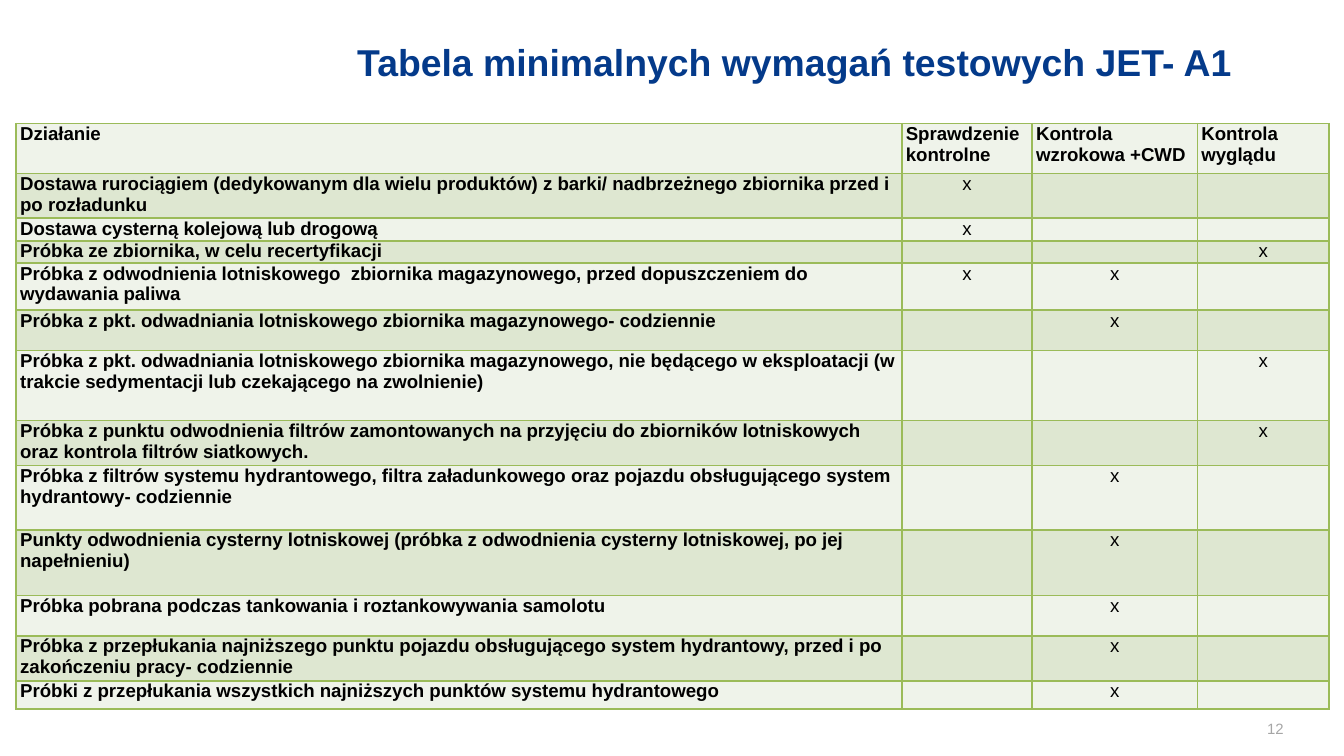
from pptx import Presentation
from pptx.dml.color import RGBColor
from pptx.enum.text import MSO_ANCHOR, PP_ALIGN as Align
from pptx.oxml.ns import qn
from pptx.util import Inches, Pt
from lxml.etree import SubElement

NAVY = RGBColor(0x04, 0x3A, 0x8A)
GRAY = RGBColor(0xA6, 0xA6, 0xA6)
BLACK = RGBColor(0, 0, 0)
GREEN = RGBColor(0x9B, 0xBB, 0x59)
LIGHT = RGBColor(0xEF, 0xF3, 0xEA)
SAGE = RGBColor(0xDE, 0xE7, 0xD1)
FACE = "Arial"

# Content: row height, action, columns of the x marks
TITLE = "Tabela minimalnych wymagań testowych JET- A1"
HEADS = ["Działanie", "Sprawdzenie kontrolne", "Kontrola wzrokowa +CWD", "Kontrola wyglądu"]
WIDTHS = [6.59, 0.97, 1.23, 0.98]
HEAD_H = 0.37
CHECK, CWD, LOOK = 1, 2, 3
TESTS = [
    (0.3, "Dostawa rurociągiem (dedykowanym dla wielu produktów) z barki/ nadbrzeżnego "
          "zbiornika przed i po rozładunku", [CHECK]),
    (0.14, "Dostawa cysterną kolejową lub drogową", [CHECK]),
    (0.14, "Próbka ze zbiornika, w celu recertyfikacji", [LOOK]),
    (0.35, "Próbka z odwodnienia lotniskowego  zbiornika magazynowego, przed "
           "dopuszczeniem do wydawania paliwa", [CHECK, CWD]),
    (0.3, "Próbka z pkt. odwadniania lotniskowego zbiornika magazynowego- codziennie", [CWD]),
    (0.52, "Próbka z pkt. odwadniania lotniskowego zbiornika magazynowego, nie będącego "
           "w eksploatacji (w trakcie sedymentacji lub czekającego na zwolnienie)", [LOOK]),
    (0.28, "Próbka z punktu odwodnienia filtrów zamontowanych na przyjęciu do zbiorników "
           "lotniskowych oraz kontrola filtrów siatkowych.", [LOOK]),
    (0.48, "Próbka z filtrów systemu hydrantowego, filtra załadunkowego oraz pojazdu "
           "obsługującego system hydrantowy- codziennie", [CWD]),
    (0.49, "Punkty odwodnienia cysterny lotniskowej (próbka z odwodnienia cysterny "
           "lotniskowej, po jej napełnieniu)", [CWD]),
    (0.3, "Próbka pobrana podczas tankowania i roztankowywania samolotu", [CWD]),
    (0.32, "Próbka z przepłukania najniższego punktu pojazdu obsługującego system "
           "hydrantowy, przed i po zakończeniu pracy- codziennie", [CWD]),
    (0.21, "Próbki z przepłukania wszystkich najniższych punktów systemu hydrantowego", [CWD]),
]


def style(para, size, color, bold=False, align=Align.LEFT):
    para.alignment = align
    for run in para.runs:
        font = run.font
        font.name, font.size, font.bold = FACE, Pt(size), bold
        font.color.rgb = color


def add_text(slide, box, text, anchor, *look):
    frame = slide.shapes.add_textbox(*map(Inches, box)).text_frame
    frame.word_wrap = True
    frame.vertical_anchor = anchor
    frame.text = text
    style(frame.paragraphs[0], *look)


def add_borders(cell):
    props = cell._tc.get_or_add_tcPr()
    for spot, side in enumerate(("lnL", "lnR", "lnT", "lnB")):
        line = SubElement(props, qn("a:" + side), w=str(Pt(1)))
        fill = SubElement(line, qn("a:solidFill"))
        SubElement(fill, qn("a:srgbClr"), val=str(GREEN))
        props.insert(spot, line)  # borders come before the fill


def fill_cell(cell, text, back, bold, align):
    cell.margin_left = cell.margin_right = Inches(0.03)
    cell.margin_top = cell.margin_bottom = 0
    cell.fill.solid()
    cell.fill.fore_color.rgb = back
    add_borders(cell)
    para = cell.text_frame.paragraphs[0]
    if text:
        para.text = text
        style(para, 10, BLACK, bold, align)
    else:  # keeps empty cells from stretching the row
        end = SubElement(para._p, qn("a:endParaRPr"), sz="800")
        SubElement(end, qn("a:latin"), typeface=FACE)


prs = Presentation()
prs.slide_width, prs.slide_height = Inches(10), Inches(10 * 9 / 16)
slide = prs.slides.add_slide(prs.slide_layouts[6])

# Title and page number
add_text(slide, (2.56, 0.24, 7.4, 0.58), TITLE, MSO_ANCHOR.TOP, 20, NAVY, True)
add_text(slide, (9.13, 5.27, 0.52, 0.3), "12", MSO_ANCHOR.MIDDLE, 8, GRAY, False, Align.RIGHT)

# Table of tests
rows = [HEADS] + [
    [name] + ["x" if col in marks else "" for col in (CHECK, CWD, LOOK)]
    for _, name, marks in TESTS
]
heights = [HEAD_H] + [test[0] for test in TESTS]
table = slide.shapes.add_table(
    len(rows), len(HEADS), Inches(0.12), Inches(0.92),
    Inches(sum(WIDTHS)), Inches(sum(heights))).table
for col, width in zip(table.columns, WIDTHS):
    col.width = Inches(width)
for r, (row, height) in enumerate(zip(rows, heights)):
    table.rows[r].height = Inches(height)
    for c, text in enumerate(row):
        label = r == 0 or c == 0
        fill_cell(table.cell(r, c), text, SAGE if r % 2 else LIGHT,
                  label, Align.LEFT if label else Align.CENTER)

prs.save("out.pptx")
